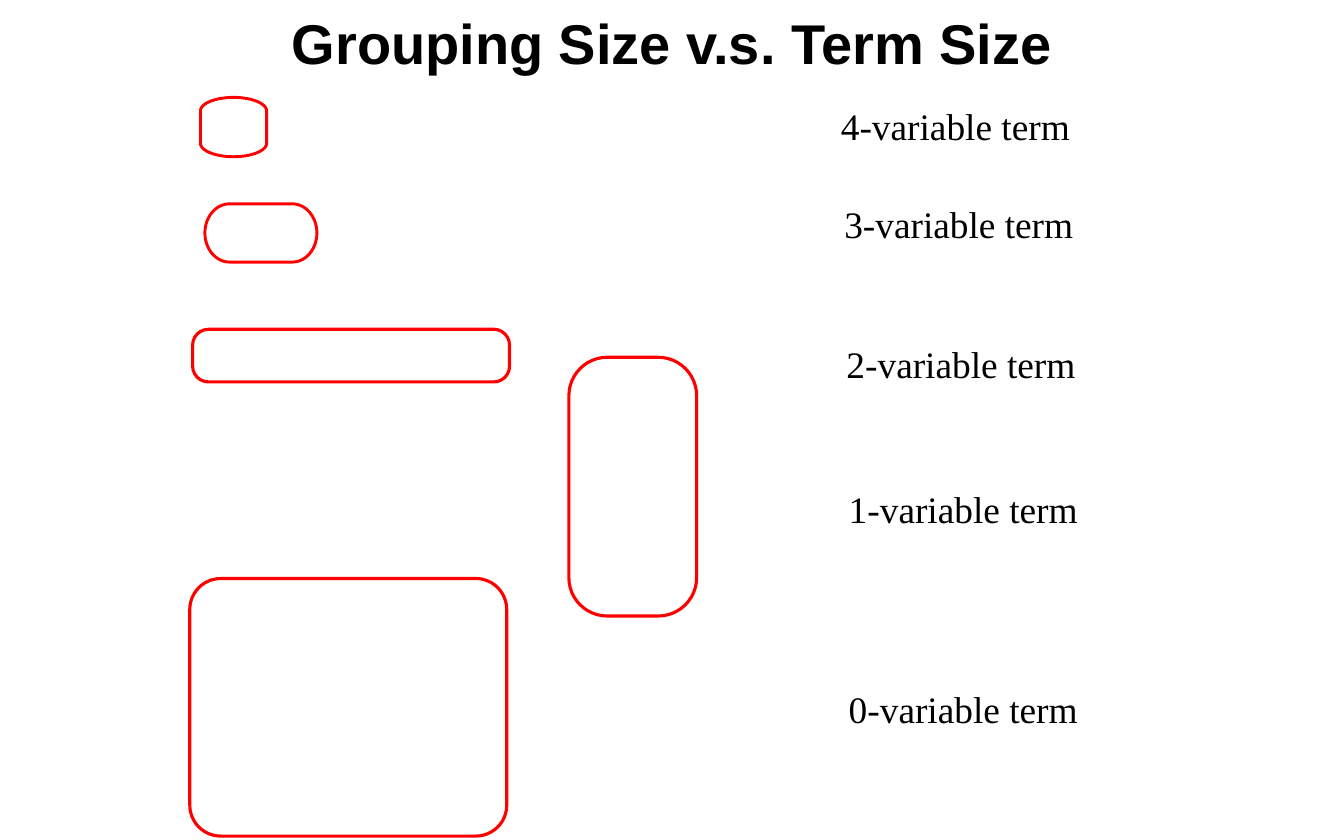
"""Build the slide that sets grouping sizes beside term sizes."""
from math import cos, pi, sin

from pptx import Presentation
from pptx.dml.color import RGBColor
from pptx.enum.shapes import MSO_SHAPE as Shape
from pptx.enum.text import MSO_ANCHOR as Anchor, MSO_AUTO_SIZE as Fit, PP_ALIGN as Align
from pptx.util import Inches, Pt

RED = RGBColor(255, 0, 0)
BLACK = RGBColor(0, 0, 0)

deck = Presentation()
deck.slide_width, deck.slide_height = Inches(12), Inches(7.5)
col, row = deck.slide_width / 120, deck.slide_height / 75
slide = deck.slides.add_slide(deck.slide_layouts[6])


def place(left, top, wide, high):
    return [round(n * unit) for n, unit in zip((left, top, wide, high), (col, row) * 2)]


def write(text, box, size=24, font="Times New Roman", bold=False,
          align=Align.LEFT, anchor=Anchor.TOP, wrap=False, fit=Fit.SHAPE_TO_FIT_TEXT):
    frame = slide.shapes.add_textbox(*place(*box)).text_frame
    frame.word_wrap, frame.auto_size, frame.vertical_anchor = wrap, fit, anchor
    par = frame.paragraphs[0]
    par.alignment = align
    run = par.add_run()
    run.text = text
    run.font.size, run.font.name, run.font.bold = Pt(size), font, bold
    run.font.color.rgb = BLACK


loops = []

ovals = [
    (17.9, 8.7, 5.9, 5.3, 2.95, 1.2),
    (18.3, 18.2, 10, 5.2, 2.2, 2.6),
]
steps = 16
for left, top, wide, high, bend, rise in ovals:
    dots = []
    for turn in range(4):
        for step in range(steps + 1):
            arc = (turn + step / steps) * pi / 2
            mid = left + (wide - bend if turn in (0, 3) else bend)
            level = top + (high - rise if turn < 2 else rise)
            dots.append((round((mid + bend * cos(arc)) * col),
                         round((level + rise * sin(arc)) * row)))
    path = slide.shapes.build_freeform(*dots[0])
    path.add_line_segments(dots[1:], close=True)
    loops.append((path.convert_to_shape(), 1.88))

rounds = [
    ((50.8, 31.9, 11.4, 23.1), 0.3, 0),
    ((19.6, 49, 23, 28.3), 0.12, 270),
    ((29, 17.6, 4.7, 28.3), 0.3, 270),
]
for box, curve, turn in rounds:
    loop = slide.shapes.add_shape(Shape.ROUNDED_RECTANGLE, *place(*box))
    loop.adjustments[0], loop.rotation = curve, turn
    loops.append((loop, 2))

for loop, width in loops:
    loop.shadow.inherit = False
    loop.fill.background()
    loop.line.color.rgb, loop.line.width = RED, Pt(width)

write("Grouping Size v.s. Term Size", (10, 0, 100, 7.5), size=36, font="Arial",
      bold=True, align=Align.CENTER, anchor=Anchor.MIDDLE, wrap=True, fit=Fit.NONE)

spots = [(74.8, 60.8), (74.8, 42.9), (74.6, 30), (74.4, 17.5), (74.1, 8.7)]
for count, (left, top) in enumerate(spots):
    write(f"{count}-variable term", (left, top, 22.6, 5.1))

deck.save("out.pptx")
